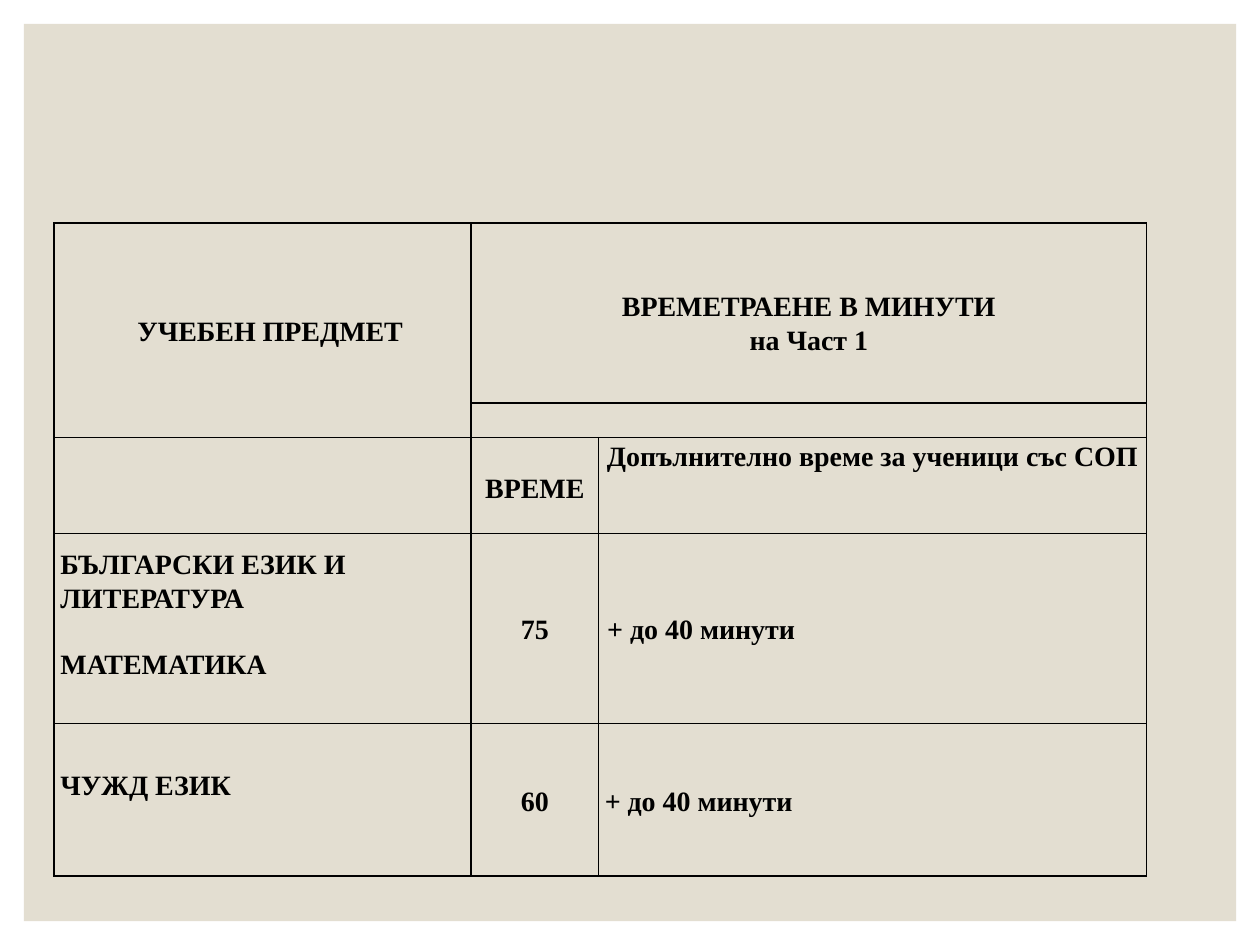
from dataclasses import dataclass

from lxml.etree import SubElement
from pptx import Presentation
from pptx.dml.color import RGBColor
from pptx.enum.shapes import MSO_SHAPE
from pptx.enum.text import MSO_ANCHOR, PP_ALIGN
from pptx.oxml.ns import qn
from pptx.table import Table, _Cell
from pptx.util import Inches, Pt


@dataclass(frozen=True)
class Theme:
    panel: str = "E3DED1"
    ink: str = "000000"
    font: str = "Times New Roman"
    size: float = 16
    empty_size: float = 8
    border: float = 1
    line_spacing: float = 1.07


@dataclass(frozen=True)
class Entry:
    row: int
    col: int
    text: str
    align: PP_ALIGN = PP_ALIGN.LEFT
    anchor: MSO_ANCHOR = MSO_ANCHOR.MIDDLE
    left: float = 0.05
    top: float = 0.01
    bottom: float = 0
    gap: float = 0


THEME = Theme()
COLS = [3.31, 1.01, 4.35]
ROWS = [1.43, 0.26, 0.76, 1.51, 1.21]
MERGES = [((0, 0), (1, 0)), ((0, 1), (0, 2)), ((1, 1), (1, 2))]
CENTER, TOP = PP_ALIGN.CENTER, MSO_ANCHOR.TOP
ENTRIES = [
    Entry(0, 0, "УЧЕБЕН ПРЕДМЕТ", CENTER, left=0.17),
    Entry(0, 1, "ВРЕМЕТРАЕНЕ В МИНУТИ\nна Част 1", CENTER, TOP, top=0.53),
    Entry(2, 1, "ВРЕМЕ", CENTER, TOP, top=0.27),
    Entry(2, 2, "Допълнително време за ученици със СОП", CENTER, TOP),
    Entry(3, 0, "БЪЛГАРСКИ ЕЗИК И ЛИТЕРАТУРА\nМАТЕМАТИКА", bottom=0.24, gap=19),
    Entry(3, 1, "75", CENTER),
    Entry(3, 2, "+ до 40 минути", left=0.07),
    Entry(4, 0, "ЧУЖД ЕЗИК", bottom=0.24),
    Entry(4, 1, "60", CENTER),
    Entry(4, 2, "+ до 40 минути"),
]


def style_cell(cell: _Cell) -> None:
    cell.margin_left = cell.margin_right = Inches(0.05)
    cell.margin_top, cell.margin_bottom = Inches(0.01), 0
    tc_pr = cell._tc.get_or_add_tcPr()
    for side in ("a:lnL", "a:lnR", "a:lnT", "a:lnB"):
        ln = SubElement(tc_pr, qn(side), w=str(Pt(THEME.border)))
        fill = SubElement(ln, qn("a:solidFill"))
        SubElement(fill, qn("a:srgbClr"), val=THEME.ink)
    cell.fill.background()


def shrink_empty(cell: _Cell) -> None:
    p = cell.text_frame.paragraphs[0]
    SubElement(p._p, qn("a:endParaRPr"), sz=str(int(THEME.empty_size * 100)))


def write_entry(table: Table, entry: Entry) -> None:
    cell = table.cell(entry.row, entry.col)
    cell.vertical_anchor = entry.anchor
    cell.margin_left = Inches(entry.left)
    cell.margin_top = Inches(entry.top)
    cell.margin_bottom = Inches(entry.bottom)
    tf = cell.text_frame
    tf.text = entry.text
    for i, p in enumerate(tf.paragraphs):
        p.alignment = entry.align
        p.line_spacing = THEME.line_spacing
        if i and entry.gap:
            p.space_before = Pt(entry.gap)
        for r in p.runs:
            r.font.name = THEME.font
            r.font.size = Pt(THEME.size)
            r.font.bold = True
            r.font.color.rgb = RGBColor.from_string(THEME.ink)


def main() -> None:
    prs = Presentation()
    prs.slide_width, prs.slide_height = Inches(10), Inches(7.5)
    s = prs.slides.add_slide(prs.slide_layouts[6])

    panel = s.shapes.add_shape(
        MSO_SHAPE.RECTANGLE, Inches(0.19), Inches(0.19), Inches(9.62), Inches(7.12)
    )
    panel.shadow.inherit = False
    panel.fill.solid()
    panel.fill.fore_color.rgb = RGBColor.from_string(THEME.panel)
    panel.line.fill.background()

    table = s.shapes.add_table(
        len(ROWS), len(COLS), Inches(0.43), Inches(1.77),
        Inches(sum(COLS)), Inches(sum(ROWS)),
    ).table
    table.first_row = table.horz_banding = False
    for column, width in zip(table.columns, COLS):
        column.width = Inches(width)
    for row, height in zip(table.rows, ROWS):
        row.height = Inches(height)
    for cell in table.iter_cells():
        style_cell(cell)
    for first, last in MERGES:
        table.cell(*first).merge(table.cell(*last))
    for entry in ENTRIES:
        write_entry(table, entry)
    for cell in table.iter_cells():
        if not cell.text_frame.text:
            shrink_empty(cell)

    prs.save("out.pptx")


if __name__ == "__main__":
    main()
